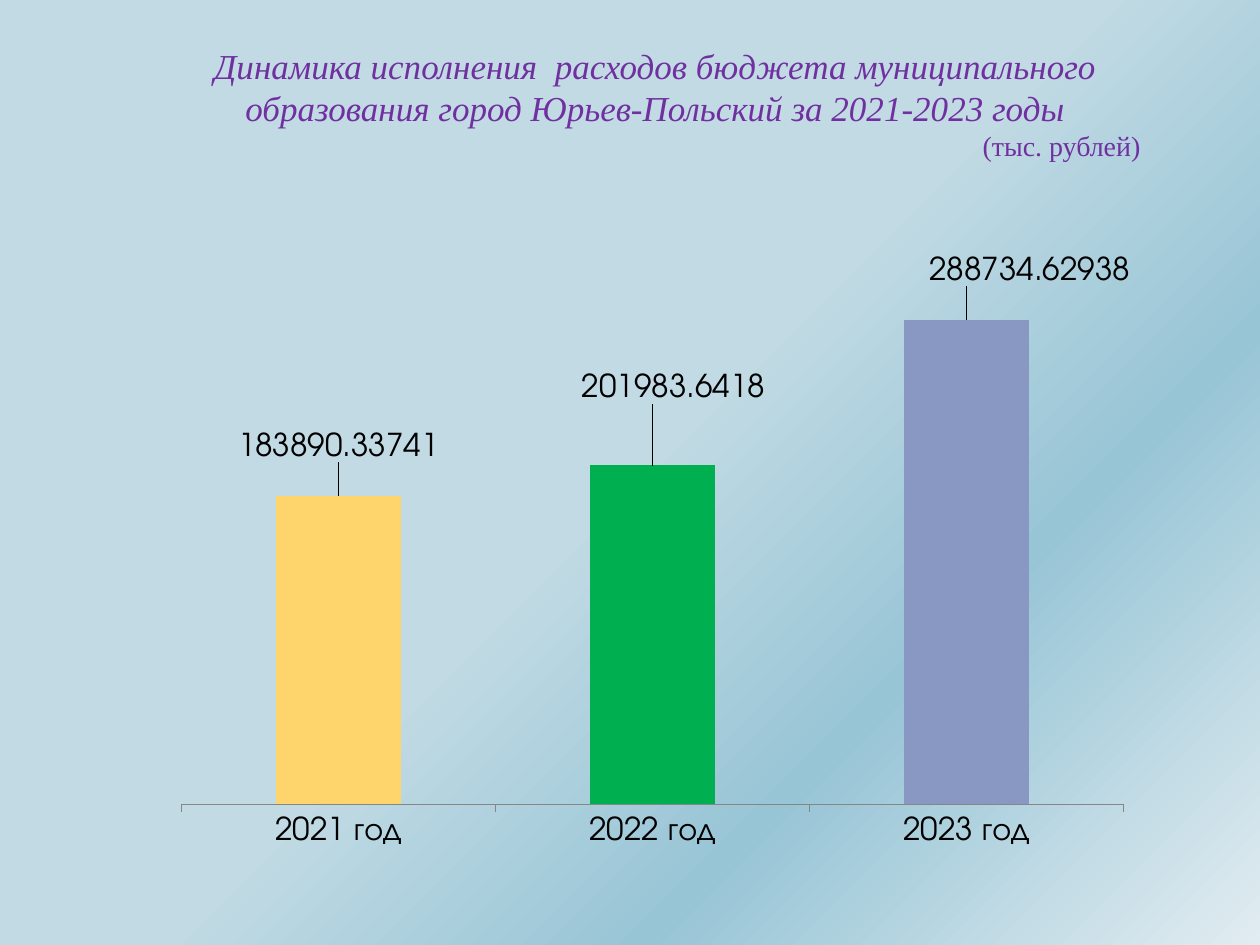
from copy import deepcopy

from lxml import etree
from pptx import Presentation
from pptx.chart.data import CategoryChartData
from pptx.dml.color import RGBColor
from pptx.enum.chart import XL_CHART_TYPE, XL_LABEL_POSITION, XL_TICK_MARK
from pptx.enum.text import MSO_AUTO_SIZE, PP_ALIGN
from pptx.oxml.ns import qn
from pptx.util import Inches, Pt

COLUMN = XL_CHART_TYPE.COLUMN_CLUSTERED
ABOVE = XL_LABEL_POSITION.OUTSIDE_END
OUTSIDE = XL_TICK_MARK.OUTSIDE
GROW = MSO_AUTO_SIZE.SHAPE_TO_FIT_TEXT
CENTER, RIGHT = PP_ALIGN.CENTER, PP_ALIGN.RIGHT

TITLE = [
    ("Динамика исполнения  расходов бюджета муниципального", 20, True, CENTER),
    ("образования город Юрьев-Польский за 2021-2023 годы", 20, True, CENTER),
    ("(тыс. рублей)", 16, False, RIGHT),
]
YEARS = [
    ("2021 год", 183890.33741, "FED46C", (0, -0.04)),
    ("2022 год", 201983.6418, "00B050", (0.02, -0.08)),
    ("2023 год", 288734.62938, "8898C3", (0.06, -0.04)),
]
STOPS = [(0.5, "C1DAE4"), (0.72, "98C5D6"), (1, "E1ECF1")]


def color(code):
    return RGBColor.from_string(code)


def layout(**items):
    root = etree.Element(qn("c:layout"))
    manual = etree.SubElement(root, qn("c:manualLayout"))
    for name, value in items.items():
        etree.SubElement(manual, qn(f"c:{name}"), val=str(value))
    return root


class Deck:
    head = "Times New Roman"
    body = "TeX Gyre Adventor"
    accent = "7030A0"
    ink = "000000"
    line = "868686"

    def __init__(self):
        self.prs = Presentation()
        self.prs.slide_width = Inches(10)
        self.prs.slide_height = Inches(7.5)
        self.slide = self.prs.slides.add_slide(self.prs.slide_layouts[6])

    def area(self, left, top, width, height):
        wide, high = self.prs.slide_width, self.prs.slide_height
        return int(left * wide), int(top * high), int(width * wide), int(height * high)

    def back(self, stops):
        fill = self.slide.background.fill
        fill.gradient()
        fill.gradient_angle = 315
        group = self.slide.element.find(".//" + qn("a:gsLst"))
        group.append(deepcopy(group[-1]))
        for stop, (place, code) in zip(fill.gradient_stops, stops):
            stop.position = place
            stop.color.rgb = color(code)

    def text(self, lines, *area):
        frame = self.slide.shapes.add_textbox(*self.area(*area)).text_frame
        frame.word_wrap = True
        frame.auto_size = GROW
        for i, (words, size, slant, align) in enumerate(lines):
            para = frame.add_paragraph() if i else frame.paragraphs[0]
            para.text = words
            para.alignment = align
            font = para.font
            font.name, font.size, font.italic = self.head, Pt(size), slant
            font.color.rgb = color(self.accent)

    def chart(self, rows, *area):
        data = CategoryChartData()
        data.categories = [row[0] for row in rows]
        data.add_series("Series 1", [row[1] for row in rows])
        chart = self.slide.shapes.add_chart(COLUMN, *self.area(*area), data).chart
        chart.has_legend = chart.has_title = False
        chart.font.name, chart.font.size = self.body, Pt(18)
        chart.font.color.rgb = color(self.ink)

        scale = chart.value_axis
        scale.minimum_scale, scale.maximum_scale = 0, 350000
        scale.has_major_gridlines = scale.visible = False
        axis = chart.category_axis
        axis.major_tick_mark = OUTSIDE
        axis.format.line.color.rgb = color(self.line)

        plot = chart.plots[0]
        plot.gap_width = 150
        plot.vary_by_categories = False
        series = plot.series[0]
        labels = series.data_labels
        labels.show_value = True
        labels.position = ABOVE
        series.format.fill.solid()
        series.format.fill.fore_color.rgb = color(rows[-1][2])
        for i, (_, _, code, (x, y)) in enumerate(rows):
            point = series.points[i]
            point.format.fill.solid()
            point.format.fill.fore_color.rgb = color(code)
            point.data_label.position = ABOVE
            label = labels._element.findall(qn("c:dLbl"))[i]
            label.insert(1, layout(x=x, y=y))

        zone = chart.element.find(".//" + qn("c:plotArea"))
        for old in zone.findall(qn("c:layout")):
            zone.remove(old)
        zone.insert(0, layout(layoutTarget="inner", xMode="edge", yMode="edge",
                              x=0.1, y=0.04, w=0.89, h=0.84))


def main():
    deck = Deck()
    deck.back(STOPS)
    deck.chart(YEARS, 0.06, 0.2, 0.84, 0.74)
    deck.text(TITLE, 0.125, 0.04, 0.79, 0.14)
    deck.prs.save("out.pptx")


if __name__ == "__main__":
    main()
